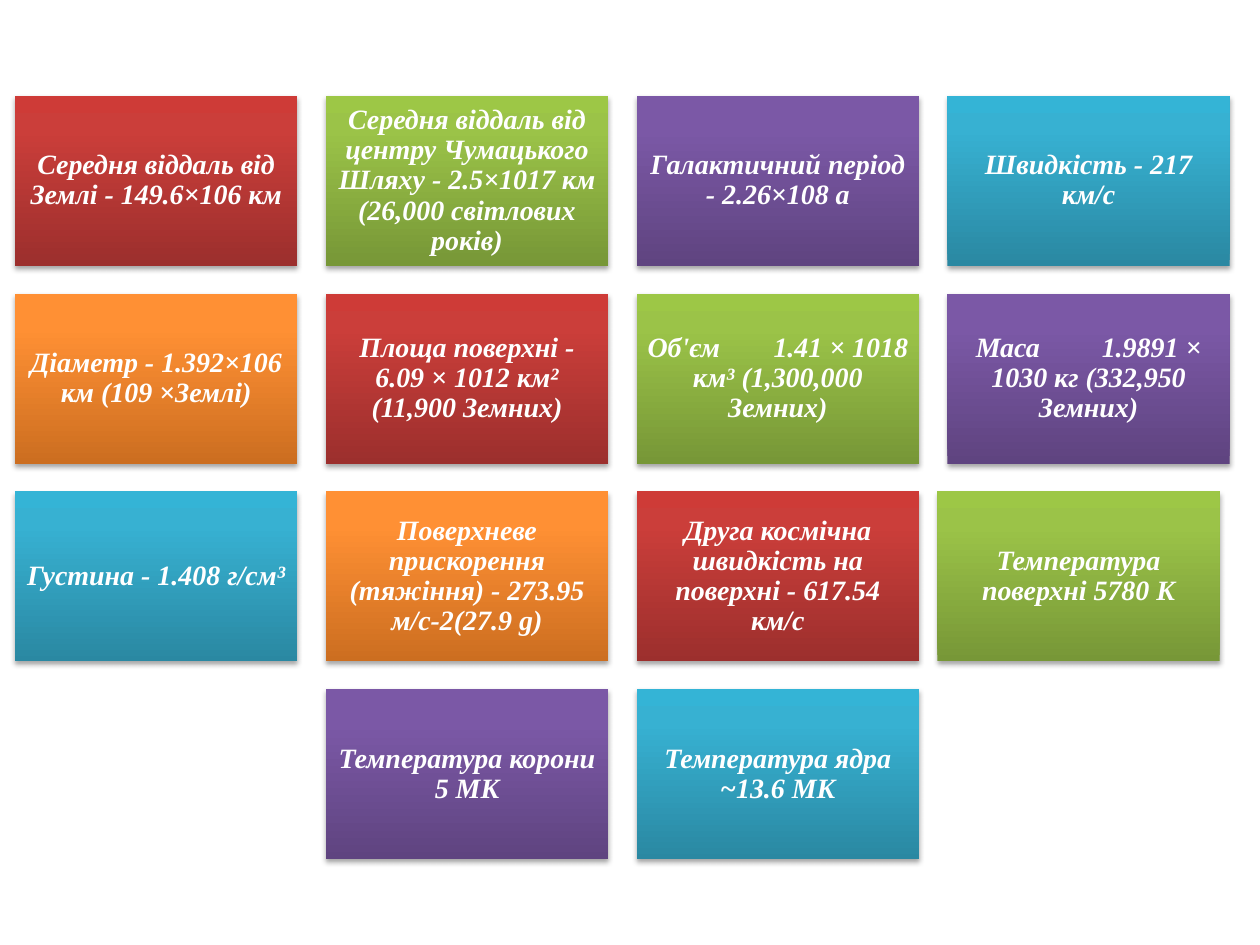
from copy import deepcopy
from dataclasses import dataclass

from lxml import etree
from pptx import Presentation
from pptx.dml.color import RGBColor
from pptx.enum.shapes import MSO_SHAPE
from pptx.enum.text import MSO_ANCHOR, PP_ALIGN
from pptx.oxml.ns import qn
from pptx.util import Inches, Pt

RECTANGLE = MSO_SHAPE.RECTANGLE
MIDDLE = MSO_ANCHOR.MIDDLE
CENTER = PP_ALIGN.CENTER

LEFT, TOP = 0.12, 0.76
WIDTH, HEIGHT = 2.24, 1.35
COLUMN_STEP, ROW_STEP = 7.4 / 3, 1.57
INSET = 0.07

STOP_POSITIONS = (0, 0.8, 1)
GRADIENTS = (
    ("9C2F2D", "CB3E3A", "CE3B37"),
    ("779737", "9BC348", "9DC746"),
    ("5F4480", "7B58A6", "7C57A8"),
    ("2A88A2", "37B1D2", "34B4D6"),
    ("CC6E20", "FF9034", "FF9136"),
)


@dataclass
class Fact:
    text: str
    column: int
    row: int
    shift: float = 0


FACTS = (
    Fact("Середня віддаль від Землі - 149.6×106 км", 0, 0),
    Fact("Середня віддаль від центру Чумацького Шляху - 2.5×1017 км (26,000 світлових років)", 1, 0),
    Fact("Галактичний період - 2.26×108 a", 2, 0),
    Fact("Швидкість - 217 км/с", 3, 0),
    Fact("Діаметр - 1.392×106 км (109 ×Землі)", 0, 1),
    Fact("Площа поверхні - 6.09 × 1012 км² (11,900 Земних)", 1, 1),
    Fact("Об'єм\t1.41 × 1018 км³ (1,300,000 Земних)", 2, 1),
    Fact("Маса\t1.9891 × 1030 кг (332,950 Земних)", 3, 1),
    Fact("Густина - 1.408 г/см³", 0, 2),
    Fact("Поверхневе прискорення (тяжіння) - 273.95 м/с-2(27.9 g)", 1, 2),
    Fact("Друга космічна швидкість на поверхні - 617.54 км/с", 2, 2),
    Fact("Температура поверхні 5780 K", 3, 2, shift=-0.08),
    Fact("Температура корони 5 MK", 1, 3),
    Fact("Температура ядра ~13.6 MK", 2, 3),
)


def color(value: str) -> RGBColor:
    return RGBColor.from_string(value)


def fill_gradient(shape, colors: tuple[str, ...]) -> None:
    """Fill from the bottom up with one stop per colour."""
    shape.fill.gradient()
    shape.fill.gradient_angle = 90
    stop_list = shape.element.spPr.find(".//" + qn("a:gsLst"))
    stop_list.append(deepcopy(stop_list[-1]))
    for stop, position, value in zip(shape.fill.gradient_stops, STOP_POSITIONS, colors):
        stop.color.rgb = color(value)
        stop.position = position


def add_shadow(shape) -> None:
    shape.shadow.inherit = False
    effects = shape.element.spPr.find(qn("a:effectLst"))
    shadow = etree.SubElement(
        effects, qn("a:outerShdw"), blurRad=str(Pt(3.1)), dist=str(Pt(1.8)),
        dir="5400000", rotWithShape="0")
    black = etree.SubElement(shadow, qn("a:srgbClr"), val="000000")
    etree.SubElement(black, qn("a:alpha"), val="35000")


def add_tile(slide, fact: Fact, colors: tuple[str, ...]) -> None:
    tile = slide.shapes.add_shape(
        RECTANGLE,
        Inches(LEFT + fact.column * COLUMN_STEP + fact.shift),
        Inches(TOP + fact.row * ROW_STEP),
        Inches(WIDTH), Inches(HEIGHT))
    fill_gradient(tile, colors)
    tile.line.fill.background()
    add_shadow(tile)

    frame = tile.text_frame
    frame.word_wrap = True
    frame.vertical_anchor = MIDDLE
    frame.margin_left = frame.margin_right = Inches(INSET)
    frame.margin_top = frame.margin_bottom = Inches(INSET)
    frame.text = fact.text
    para = frame.paragraphs[0]
    para.alignment = CENTER
    para.line_spacing = 0.9
    font = para.runs[0].font
    font.name = "Times New Roman"
    font.size = Pt(16)
    font.bold = font.italic = True
    font.color.rgb = color("FFFFFF")


def main() -> None:
    deck = Presentation()
    deck.slide_width, deck.slide_height = Inches(10), Inches(7.5)
    slide = deck.slides.add_slide(deck.slide_layouts[6])
    for index, fact in enumerate(FACTS):
        add_tile(slide, fact, GRADIENTS[index % len(GRADIENTS)])
    deck.save("out.pptx")


if __name__ == "__main__":
    main()
